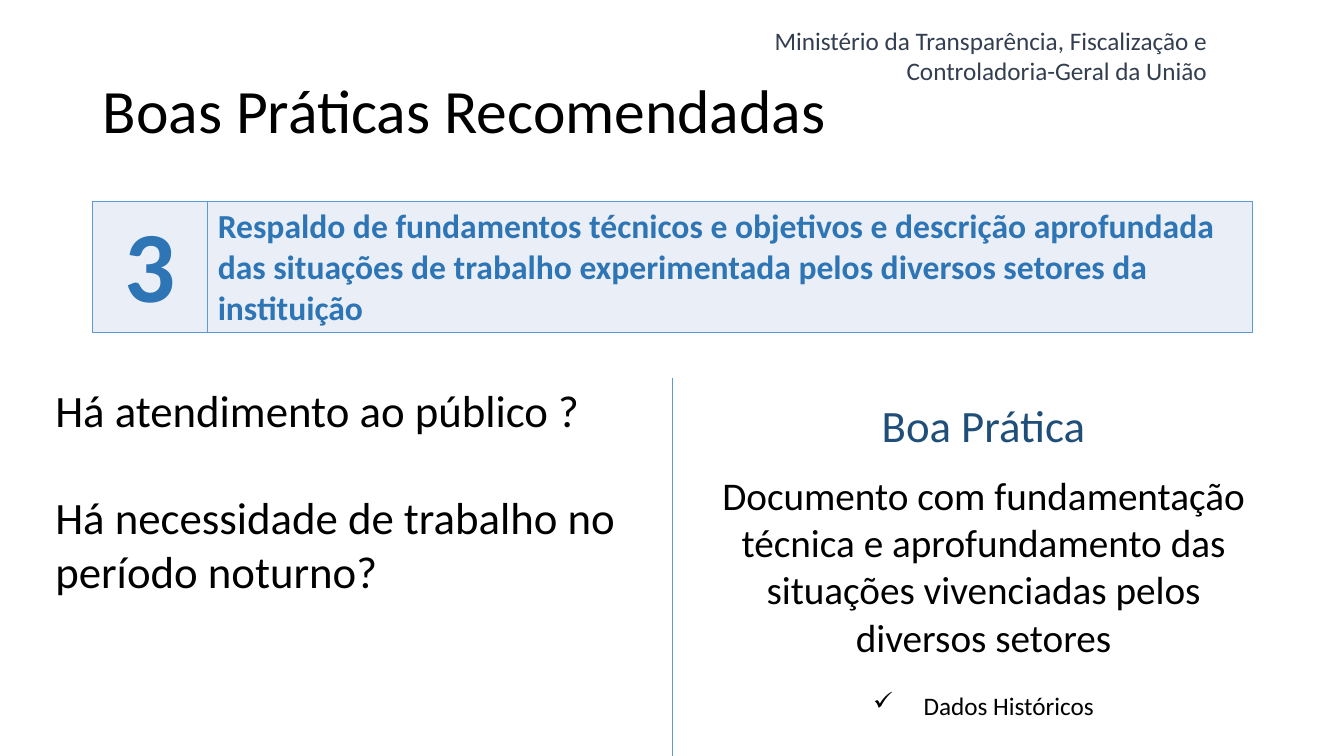
import dataclasses

import pptx
import pptx.dml.color
import pptx.enum.shapes
import pptx.enum.text
import pptx.oxml
import pptx.oxml.ns
import pptx.util
from pptx.util import Inches

ALIGN = pptx.enum.text.PP_ALIGN
ANCHOR = pptx.enum.text.MSO_ANCHOR


@dataclasses.dataclass(frozen=True)
class Theme:
    font: str = "Calibri"
    ink: str = "000000"
    slate: str = "333F50"
    accent: str = "2E75B6"
    navy: str = "1F4E79"
    rule: str = "5B9BD5"
    panel: str = "EAEFF7"
    small: int = 18
    lead: int = 24
    body: int = 28
    question: int = 32
    title: int = 44
    numeral: int = 72


def xml(tag, content="", **attributes):
    values = "".join(f' {key}="{value}"' for key, value in attributes.items())
    namespace = pptx.oxml.ns.nsdecls("a")
    return pptx.oxml.parse_xml(f"<a:{tag} {namespace}{values}>{content}</a:{tag}>")


class SlideBuilder:
    def __init__(self, slide, theme):
        self.slide = slide
        self.theme = theme

    def style(self, paragraph, size, color, align=ALIGN.LEFT, bold=False):
        paragraph.alignment = align
        for run in paragraph.runs:
            run.font.name = self.theme.font
            run.font.size = pptx.util.Pt(size)
            run.font.bold = bold
            run.font.color.rgb = pptx.dml.color.RGBColor.from_string(color)

    def text(self, box, content, size, color, align=ALIGN.LEFT, anchor=ANCHOR.TOP):
        frame = self.slide.shapes.add_textbox(*map(Inches, box)).text_frame
        frame.word_wrap = True
        frame.vertical_anchor = anchor
        frame.text = content
        for paragraph in frame.paragraphs:
            self.style(paragraph, size, color, align)
        return frame

    def bullet(self, paragraph, mark, indent):
        properties = paragraph._p.get_or_add_pPr()
        properties.set("marL", str(Inches(indent)))
        properties.set("indent", str(-Inches(indent)))
        properties.append(xml("buChar", char=mark))

    def table(self, box, widths, cells):
        grid = self.slide.shapes.add_table(1, len(cells), *map(Inches, box)).table
        for column, width in zip(grid.columns, widths):
            column.width = Inches(width)
        for cell, (content, size, align) in zip(grid.rows[0].cells, cells):
            cell.text = content
            cell.vertical_anchor = ANCHOR.MIDDLE
            self.style(cell.text_frame.paragraphs[0], size, self.theme.accent, align, True)
            cell.fill.solid()
            cell.fill.fore_color.rgb = pptx.dml.color.RGBColor.from_string(self.theme.panel)
            color = f'<a:solidFill><a:srgbClr val="{self.theme.rule}"/></a:solidFill>'
            for position, side in enumerate(("lnL", "lnR", "lnT", "lnB")):
                border = xml(side, color, w=pptx.util.Pt(1))
                cell._tc.get_or_add_tcPr().insert(position, border)

    def line(self, start, end, width):
        connector = self.slide.shapes.add_connector(
            pptx.enum.shapes.MSO_CONNECTOR.STRAIGHT, *map(Inches, start + end)
        )
        connector.line.color.rgb = pptx.dml.color.RGBColor.from_string(self.theme.rule)
        connector.line.width = pptx.util.Pt(width)
        connector._element.spPr.append(xml("effectLst"))


def main():
    presentation = pptx.Presentation()
    presentation.slide_width = Inches(13.33)
    presentation.slide_height = Inches(7.5)
    theme = Theme()
    slide = presentation.slides.add_slide(presentation.slide_layouts[6])
    page = SlideBuilder(slide, theme)

    page.text(
        (7.51, 0.2, 4.56, 0.71),
        "Ministério da Transparência, Fiscalização e Controladoria-Geral da União",
        theme.small, theme.slate, ALIGN.RIGHT,
    )
    heading = page.text(
        (0.92, 0.4, 11.5, 1.45), "Boas Práticas Recomendadas",
        theme.title, theme.ink, anchor=ANCHOR.MIDDLE,
    )
    heading.paragraphs[0].line_spacing = 0.9

    page.table(
        (0.92, 2, 11.5, 1.3),
        (1.14, 10.36),
        (
            ("3", theme.numeral, ALIGN.CENTER),
            (
                "Respaldo de fundamentos técnicos e objetivos e descrição aprofundada "
                "das situações de trabalho experimentada pelos diversos setores da instituição",
                theme.lead, ALIGN.LEFT,
            ),
        ),
    )

    questions = page.text(
        (0.45, 3.75, 5.79, 2.26),
        "Há atendimento ao público ?\nHá necessidade de trabalho no período noturno?",
        theme.question, theme.ink,
    )
    questions.paragraphs[1].space_before = pptx.util.Pt(38)

    practice = page.text(
        (6.86, 4.63, 5.79, 2.59),
        "Documento com fundamentação técnica e aprofundamento das situações "
        "vivenciadas pelos diversos setores\nDados Históricos",
        theme.body, theme.ink, ALIGN.CENTER,
    )
    history = practice.paragraphs[1]
    page.bullet(history, "✓", 0.5)
    page.style(history, theme.small, theme.ink, ALIGN.CENTER)
    history.space_before = pptx.util.Pt(22)

    page.text(
        (6.86, 3.9, 5.79, 0.64), "Boa Prática", theme.question, theme.navy, ALIGN.CENTER
    )
    page.line((6.67, 3.75), (6.67, 7.5), 0.5)

    presentation.save("out.pptx")


if __name__ == "__main__":
    main()
